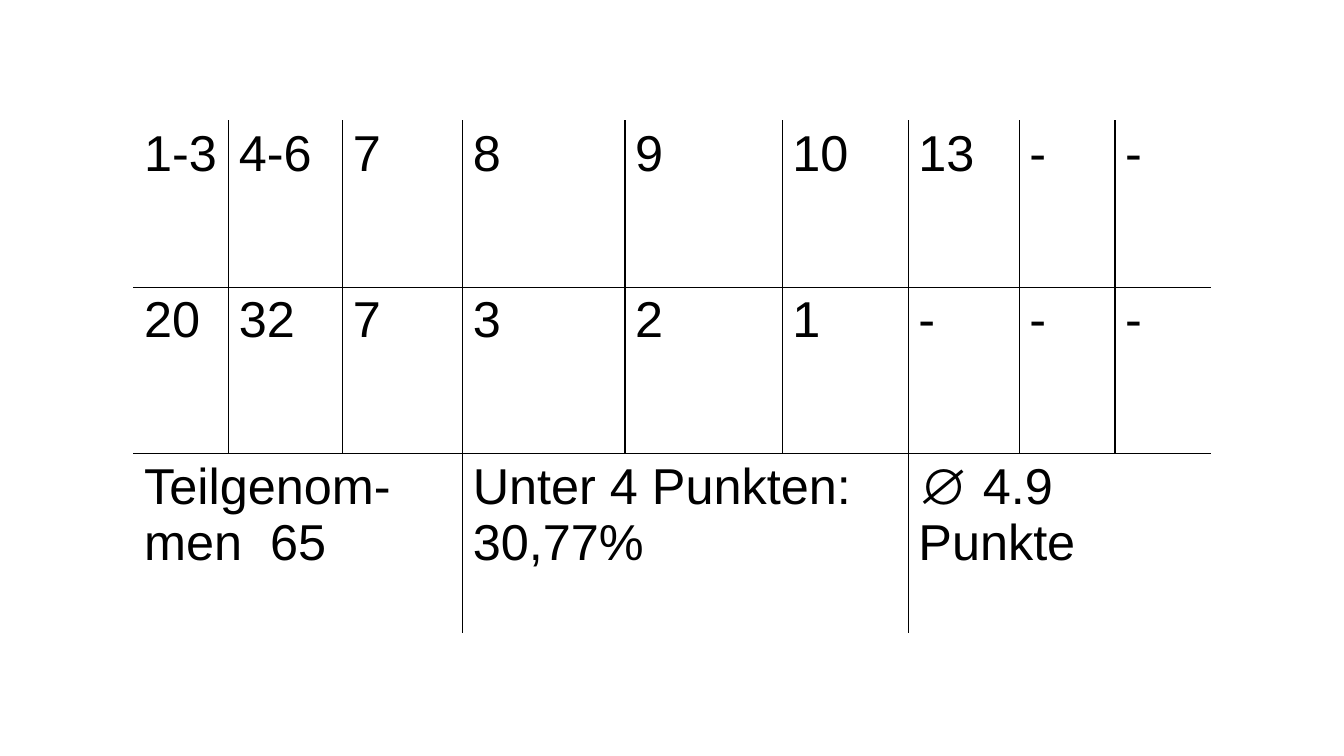
"""Build a slide with a table of exam points and their frequencies."""
from lxml import etree
from pptx import Presentation
from pptx.dml.color import RGBColor
from pptx.oxml.ns import qn
from pptx.util import Inches, Pt

COLORS = {"ink": "000000", "paper": "FFFFFF"}
COLUMN_WIDTHS = [0.94, 1.13, 1.19, 1.61, 1.56, 1.25, 1.1, 0.95, 0.95]
ROW_HEIGHTS = [1.65, 1.65, 1.79]
SUMMARY_SPAN = 3
ROWS = [
    ["1-3", "4-6", "7", "8", "9", "10", "13", "-", "-"],
    ["20", "32", "7", "3", "2", "1", "-", "-", "-"],
    ["Teilgenom-men  65", "Unter 4 Punkten:\n30,77%", "∅ 4.9 Punkte"],
]


def set_borders(cell, visible_sides):
    properties = cell._tc.get_or_add_tcPr()
    for position, side in enumerate("LRTB"):
        line = etree.Element(qn(f"a:ln{side}"), w=str(Pt(1)))
        fill = etree.SubElement(line, qn("a:solidFill"))
        color = COLORS["ink" if visible_sides[side] else "paper"]
        etree.SubElement(fill, qn("a:srgbClr"), val=color)
        properties.insert(position, line)


presentation = Presentation()
presentation.slide_width = Inches(13.33)
presentation.slide_height = Inches(7.5)
slide = presentation.slides.add_slide(presentation.slide_layouts[6])

row_count, column_count = len(ROW_HEIGHTS), len(COLUMN_WIDTHS)
table = slide.shapes.add_table(
    row_count, column_count, Inches(1.33), Inches(1.2),
    Inches(sum(COLUMN_WIDTHS)), Inches(sum(ROW_HEIGHTS)),
).table
table.first_row = False
table.horz_banding = False
for column, width in zip(table.columns, COLUMN_WIDTHS):
    column.width = Inches(width)
for row, height in zip(table.rows, ROW_HEIGHTS):
    row.height = Inches(height)

for row_index, texts in enumerate(ROWS):
    last_row = row_index == row_count - 1
    span = SUMMARY_SPAN if last_row else 1
    for column_index in range(column_count):
        cell = table.cell(row_index, column_index)
        cell.fill.solid()
        cell.fill.fore_color.rgb = RGBColor.from_string(COLORS["paper"])
        group, offset = divmod(column_index, span)
        last_group = group == len(texts) - 1
        set_borders(cell, {
            "L": offset == 0 and group > 0,
            "R": offset in (0, span - 1) and not last_group,
            "T": row_index > 0,
            "B": not last_row,
        })
        if offset:
            continue
        if span > 1:
            cell.merge(table.cell(row_index, column_index + span - 1))
        for line_index, text in enumerate(texts[group].split("\n")):
            frame = cell.text_frame
            paragraph = frame.add_paragraph() if line_index else frame.paragraphs[0]
            run = paragraph.add_run()
            run.text = text
            run.font.name = "Arial"
            run.font.size = Pt(36)
            run.font.color.rgb = RGBColor.from_string(COLORS["ink"])

presentation.save("out.pptx")
